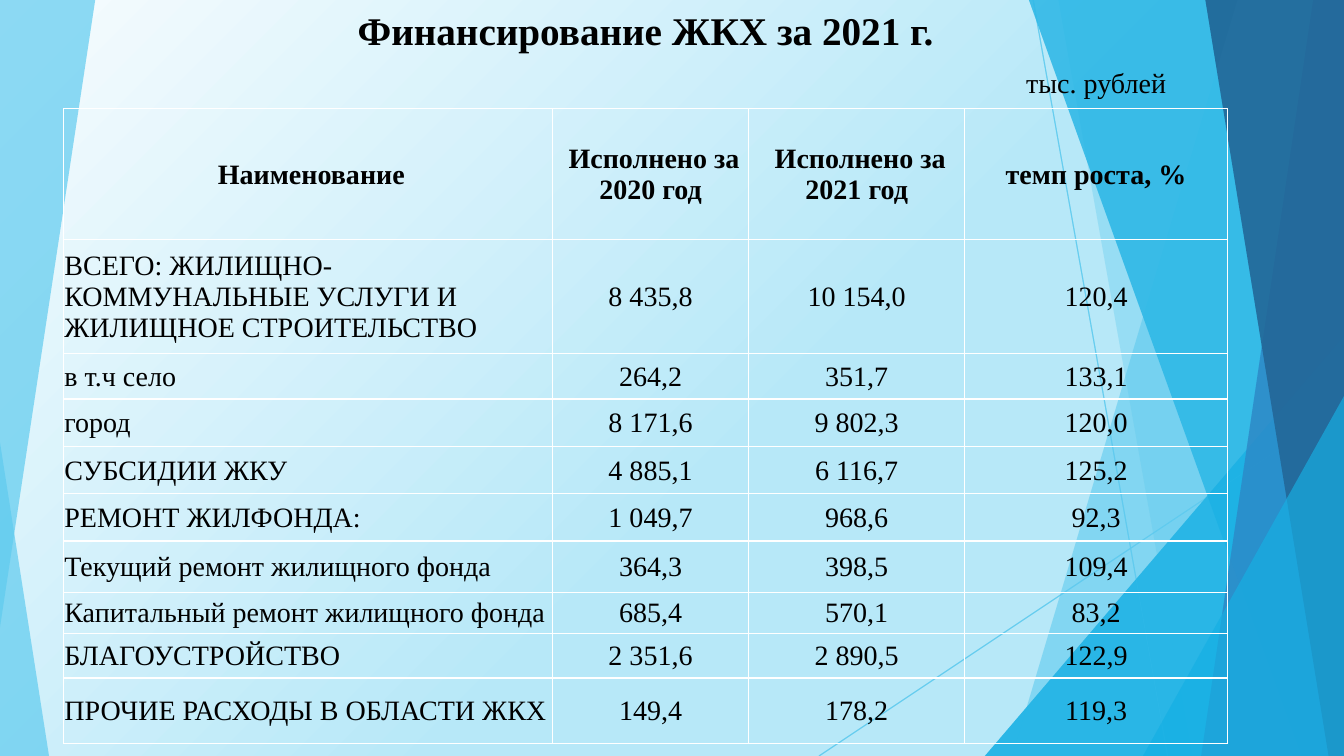
from lxml import etree
from pptx import Presentation
from pptx import util as u
from pptx.dml.color import RGBColor
from pptx.enum import shapes, text
from pptx.oxml import ns

Pt = u.Pt
COLORS = {
    "pale": "F7FCFE", "ice": "B7E8F8", "sky": "5FCBEF", "cyan": "17B0E4",
    "blue": "2E83C3", "navy": "226292", "grid": "FFFFFF", "ink": "000000",
}
FONT = "Times New Roman"
W, H = 960, 540


def paint(fill, color, alpha):
    """Solid fill with the given opacity in percent."""
    fill.solid()
    fill.fore_color.rgb = RGBColor.from_string(COLORS[color])
    for clr in fill._xPr.iter(ns.qn("a:srgbClr")):
        etree.SubElement(clr, ns.qn("a:alpha"), val=str(alpha * 1000))


def set_borders(cell, sides):
    """White 1 pt borders on the listed sides, none on the others."""
    props = cell._tc.get_or_add_tcPr()
    for index, side in enumerate("LRTB"):
        line = etree.Element(ns.qn("a:ln" + side), w=str(Pt(1)))
        if side in sides:
            solid = etree.SubElement(line, ns.qn("a:solidFill"))
            etree.SubElement(solid, ns.qn("a:srgbClr"), val=COLORS["grid"])
        else:
            etree.SubElement(line, ns.qn("a:noFill"))
        props.insert(index, line)


prs = Presentation()
prs.slide_width, prs.slide_height = Pt(W), Pt(H)
slide = prs.slides.add_slide(prs.slide_layouts[6])

# Background gradient from the top left corner
backdrop = slide.background.fill
backdrop.gradient()
backdrop.gradient_angle = 315
for stop, color, position in zip(backdrop.gradient_stops, ("pale", "ice"), (0, 0.57)):
    stop.color.rgb = RGBColor.from_string(COLORS[color])
    stop.position = position

# Facets: outline points or a corner triangle (left, top, width, height, apex)
rays = [((738, 0), (834, H)), ((W, 290), (585, H))]
right_facets = [
    ([(884, 0), (W, 0), (W, H), (723, H)], "sky", 36),
    ([(756, 0), (W, 0), (W, H), (852, H)], "sky", 20),
    ((703.5, 240, 256.5, 300, 1), "cyan", 66),
    ([(735, 0), (W, 0), (W, H), (929.5, H)], "cyan", 50),
    ([(938, 0), (W, 0), (W, H), (858, H)], "blue", 70),
    ([(861, 0), (W, 0), (W, H), (949, H)], "navy", 80),
    ((816.5, 283, 143.5, 257, 1), "cyan", 66),
]
left_facets = [
    ((0, 316, 35, 224, 0), "sky", 70),
    ([(0, 0), (68, 0), (0, 448)], "sky", 70),
]

# Two layers of the same rays and right facets, each with its own left facet
for left_facet in left_facets:
    for start, end in rays:
        ray = slide.shapes.add_connector(
            shapes.MSO_CONNECTOR.STRAIGHT, *map(Pt, start + end))
        ray.line.width = Pt(0.75)
        paint(ray.line.fill, "sky", 70)
        etree.SubElement(ray._element.spPr, ns.qn("a:effectLst"))
    for outline, color, alpha in right_facets + [left_facet]:
        if isinstance(outline, list):
            builder = slide.shapes.build_freeform(*map(Pt, outline[0]))
            builder.add_line_segments([(Pt(x), Pt(y)) for x, y in outline[1:]])
            facet = builder.convert_to_shape()
        else:
            facet = slide.shapes.add_shape(
                shapes.MSO_SHAPE.ISOSCELES_TRIANGLE, *map(Pt, outline[:4]))
            facet.adjustments[0] = outline[4]
        paint(facet.fill, color, alpha)
        facet.line.fill.background()
        facet.shadow.inherit = False

# Table: title row, unit row, header row, then figures
rows = [
    (41, ["Финансирование ЖКХ за 2021 г.", "", "", ""]),
    (29.5, ["", "", "", "тыс. рублей"]),
    (93.6, [" Наименование", " Исполнено за 2020 год", " Исполнено за 2021 год",
            "темп роста, %"]),
    (81.4, ["ВСЕГО: ЖИЛИЩНО-КОММУНАЛЬНЫЕ УСЛУГИ И ЖИЛИЩНОЕ СТРОИТЕЛЬСТВО",
            "8 435,8", "10 154,0", "120,4"]),
    (32.4, ["в т.ч село", "264,2", "351,7", "133,1"]),
    (33.8, ["город", "8 171,6", "9 802,3", "120,0"]),
    (33.8, ["СУБСИДИИ ЖКУ", "4 885,1", "6 116,7", "125,2"]),
    (33.8, ["РЕМОНТ ЖИЛФОНДА:", "1 049,7", "968,6", "92,3"]),
    (36.7, ["Текущий ремонт жилищного фонда", "364,3", "398,5", "109,4"]),
    (29.5, ["Капитальный ремонт жилищного фонда", "685,4", "570,1", "83,2"]),
    (31.7, ["БЛАГОУСТРОЙСТВО", "2 351,6", "2 890,5", "122,9"]),
    (46.8, ["ПРОЧИЕ РАСХОДЫ В ОБЛАСТИ ЖКХ", "149,4", "178,2", "119,3"]),
]
widths = [349.2, 140.4, 154.1, 187.9]
TITLE, UNIT, HEADER = range(3)

budget = slide.shapes.add_table(
    len(rows), len(widths), Pt(45.3), Pt(7.2),
    Pt(sum(widths)), Pt(sum(height for height, _ in rows))).table
budget.first_row = budget.horz_banding = False
for column, width in zip(budget.columns, widths):
    column.width = Pt(width)

for r, (height, values) in enumerate(rows):
    budget.rows[r].height = Pt(height)
    for c, value in enumerate(values):
        cell = budget.cell(r, c)
        cell.fill.background()
        set_borders(cell, {TITLE: "", UNIT: "B"}.get(r, "LRTB"))
        cell.margin_left = cell.margin_right = cell.margin_top = Pt(0.7)
        cell.margin_bottom = 0
        if r >= HEADER:
            cell.vertical_anchor = text.MSO_ANCHOR.MIDDLE
        cell.text_frame.text = value
        entry = cell.text_frame.paragraphs[0]
        is_name = c == 0 and r > HEADER
        entry.alignment = text.PP_ALIGN.LEFT if is_name else text.PP_ALIGN.CENTER
        for run in entry.runs:
            run.font.name = FONT
            run.font.size = Pt(28 if r == TITLE else 20)
            run.font.bold = r in (TITLE, HEADER)
            run.font.color.rgb = RGBColor.from_string(COLORS["ink"])
budget.cell(TITLE, 0).merge(budget.cell(TITLE, len(widths) - 1))

prs.save("out.pptx")
